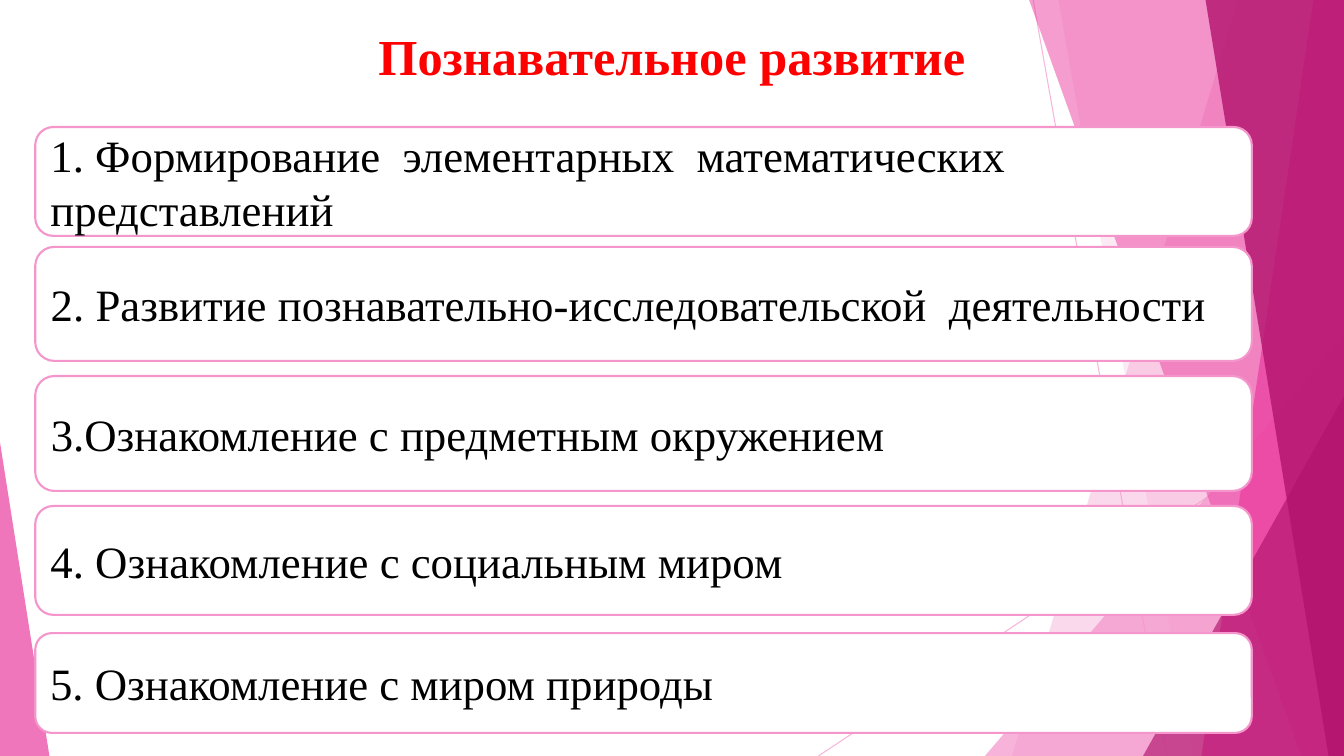
from dataclasses import dataclass

from lxml import etree
from pptx import Presentation
from pptx.dml.color import RGBColor
from pptx.enum.shapes import MSO_CONNECTOR, MSO_SHAPE
from pptx.enum.text import MSO_ANCHOR, PP_ALIGN
from pptx.oxml.ns import qn
from pptx.util import Pt

LINE = MSO_CONNECTOR.STRAIGHT
TRIANGLE = MSO_SHAPE.ISOSCELES_TRIANGLE
ROUND = MSO_SHAPE.ROUNDED_RECTANGLE
MIDDLE = MSO_ANCHOR.MIDDLE
LEFT, CENTER = PP_ALIGN.LEFT, PP_ALIGN.CENTER


@dataclass(frozen=True)
class Theme:
    font: str = "Times New Roman"
    head: int = 36
    body: int = 32
    red: str = "FF0000"
    ink: str = "000000"
    white: str = "FFFFFF"
    light: str = "F496CB"
    pink: str = "EB3D9F"
    dark: str = "B2136D"


THEME = Theme()
WIDE, HIGH = 960, 540

# Start and end points, x and y
RAYS = [
    (738, 0, 833.75, HIGH),
    (WIDE, 290.2, 584.6, HIGH),
]

# Slanted left edge (top x, bottom x), colour, opacity in percent
BACK = [
    (884.2, 722.9, THEME.light, 36),
    (756, 851.8, THEME.light, 20),
]
FRONT = [
    (735.1, 929.5, THEME.pink, 50),
    (938.2, 858.2, THEME.pink, 70),
    (861.1, 949, THEME.dark, 80),
]

# Top and height of each card, text
CARDS = [
    (90.7, 77.8, "1. Формирование  элементарных  математических представлений"),
    (176.4, 81.4, "2. Развитие познавательно-исследовательской  деятельности"),
    (268.6, 82.1, "3.Ознакомление с предметным окружением"),
    (361.4, 77.8, "4. Ознакомление с социальным миром"),
    (452.2, 71.3, "5. Ознакомление с миром природы"),
]


def fade(part, alpha):
    """Set the opacity, in percent, of every colour within an element."""
    for color in part.iter(qn("a:srgbClr")):
        etree.SubElement(color, qn("a:alpha")).set("val", str(alpha * 1000))


def tint(shape, color, alpha):
    shape.shadow.inherit = False
    shape.fill.solid()
    shape.fill.fore_color.rgb = RGBColor.from_string(color)
    shape.line.fill.background()
    fade(shape.element.spPr, alpha)


def add_ray(slide, ends):
    ray = slide.shapes.add_connector(LINE, *map(Pt, ends))
    ray.line.color.rgb = RGBColor.from_string(THEME.light)
    ray.line.width = Pt(0.75)
    props = ray.element.spPr
    fade(props, 70)
    etree.SubElement(props, qn("a:effectLst"))


def add_shard(slide, top, base, color, alpha):
    """Fill the area from a slanted edge to the right side of the slide."""
    pen = slide.shapes.build_freeform(Pt(top), 0)
    corners = [(WIDE, 0), (WIDE, HIGH), (base, HIGH)]
    pen.add_line_segments([(Pt(x), Pt(y)) for x, y in corners])
    tint(pen.convert_to_shape(), color, alpha)


def add_peak(slide, left, wide, high, tip, color, alpha):
    """Stand a triangle on the bottom edge of the slide."""
    box = map(Pt, (left, HIGH - high, wide, high))
    peak = slide.shapes.add_shape(TRIANGLE, *box)
    peak.adjustments[0] = tip
    tint(peak, color, alpha)


def write(shape, text, size, color, align, bold=False):
    frame = shape.text_frame
    frame.word_wrap = True
    frame.vertical_anchor = MIDDLE
    para = frame.paragraphs[0]
    para.alignment = align
    run = para.add_run()
    run.text = text
    font = run.font
    font.name, font.size, font.bold = THEME.font, Pt(size), bold
    font.color.rgb = RGBColor.from_string(color)


def add_title(slide, text):
    box = slide.shapes.add_textbox(Pt(66), Pt(12.2), Pt(828), Pt(54))
    write(box, text, THEME.head, THEME.red, CENTER, bold=True)


def add_card(slide, top, high, text):
    box = map(Pt, (25.2, top, 869, high))
    card = slide.shapes.add_shape(ROUND, *box)
    card.shadow.inherit = False
    card.fill.solid()
    card.fill.fore_color.rgb = RGBColor.from_string(THEME.white)
    card.line.color.rgb = RGBColor.from_string(THEME.light)
    card.line.width = Pt(1.5)
    write(card, text, THEME.body, THEME.ink, LEFT)


def add_decor(slide):
    for ends in RAYS:
        add_ray(slide, ends)
    for shard in BACK:
        add_shard(slide, *shard)
    add_peak(slide, 703.5, 256.5, 300, 1, THEME.light, 72)
    for shard in FRONT:
        add_shard(slide, *shard)
    add_peak(slide, 816.5, 143.5, 257, 1, THEME.dark, 66)
    add_peak(slide, 0, 35.3, 224, 0, THEME.pink, 70)


def main():
    deck = Presentation()
    deck.slide_width, deck.slide_height = Pt(WIDE), Pt(HIGH)
    slide = deck.slides.add_slide(deck.slide_layouts[6])
    add_decor(slide)
    add_title(slide, "Познавательное развитие")
    for card in CARDS:
        add_card(slide, *card)
    deck.save("out.pptx")


if __name__ == "__main__":
    main()
